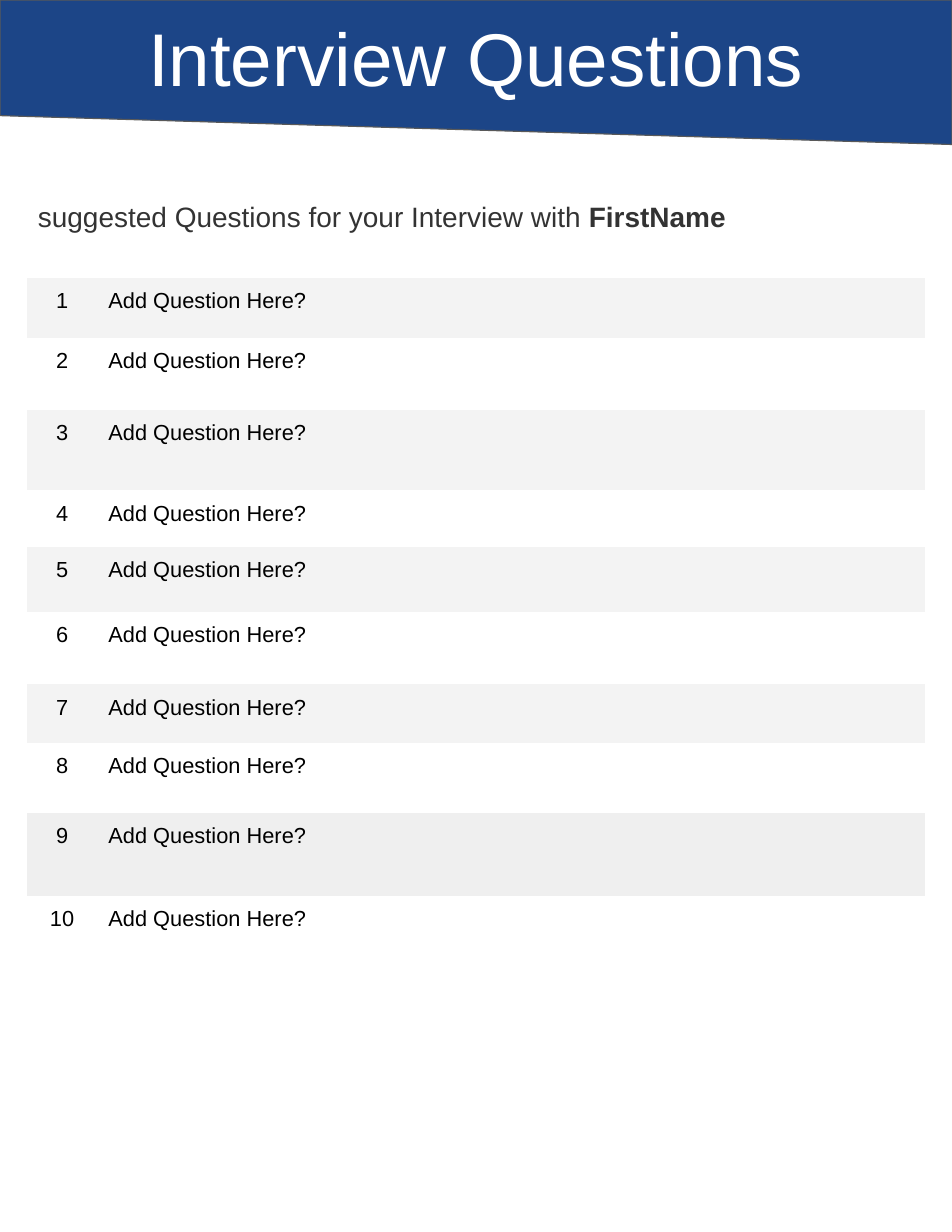
from pptx import Presentation
from pptx.dml.color import RGBColor
from pptx.enum.shapes import MSO_SHAPE
from pptx.enum.text import MSO_ANCHOR, MSO_AUTO_SIZE, PP_ALIGN
from pptx.oxml.ns import qn
from pptx.util import Pt

# Content
TITLE = "Interview Questions"
INTRO = [("suggested Questions for your Interview with ", False), ("FirstName", True)]
QUESTIONS = ["Add Question Here?"] * 10

# Layout, in points
PAGE_WIDTH, PAGE_HEIGHT = 612, 792
BANNER_HEIGHT = 92.9
MARGIN = 17.3
TABLE_TOP = 178.6
COLUMN_WIDTHS = [45.2, 532.1]
ROW_HEIGHTS = [38.4, 46.5, 51.6, 36.4, 41.8, 46.5, 37.6, 45.2, 53.3, 60.5]
PADDING = 7.2

# Colours
BLUE = RGBColor(0x1C, 0x45, 0x87)
OUTLINE = RGBColor(0x59, 0x59, 0x59)
WHITE = RGBColor(0xFF, 0xFF, 0xFF)
BLACK = RGBColor(0, 0, 0)
CHARCOAL = RGBColor(0x33, 0x33, 0x33)
STRIPE = RGBColor(0xF3, 0xF3, 0xF3)
DARK_STRIPE = RGBColor(0xEF, 0xEF, 0xEF)
DARK_STRIPE_NUMBER = 9

NO_STYLE_NO_GRID = "{2D5ABB26-0587-4C30-8999-92F81FD0307C}"
FRAME_FORMAT = {
    "word_wrap": True,
    "auto_size": MSO_AUTO_SIZE.NONE,
    **{f"margin_{side}": Pt(PADDING) for side in ("left", "top", "right", "bottom")},
}
CELL_FORMAT = {
    "vertical_anchor": MSO_ANCHOR.TOP,
    **{f"margin_{side}": Pt(PADDING) for side in ("left", "top", "right", "bottom")},
}


def apply_format(target, values):
    for name, value in values.items():
        setattr(target, name, value)


def add_text(paragraph, text, size, color, bold=False):
    run = paragraph.add_run()
    run.text = text
    apply_format(run.font, {"name": "Arial", "size": Pt(size), "bold": bold})
    run.font.color.rgb = color


def place(shape, left, top, width, height):
    apply_format(shape, {"left": Pt(left), "top": Pt(top),
                         "width": Pt(width), "height": Pt(height)})


presentation = Presentation()
apply_format(presentation, {"slide_width": Pt(PAGE_WIDTH), "slide_height": Pt(PAGE_HEIGHT)})
slide = presentation.slides.add_slide(presentation.slide_layouts[5])

# Banner: turned and mirrored so the slant is at the bottom, kept behind the title
banner = slide.shapes.add_shape(MSO_SHAPE.FLOWCHART_MANUAL_INPUT,
                                0, 0, Pt(PAGE_WIDTH), Pt(BANNER_HEIGHT))
banner.rotation = 180
banner._element.spPr.find(qn("a:xfrm")).set("flipH", "1")
banner.shadow.inherit = False
banner.fill.solid()
banner.fill.fore_color.rgb = BLUE
banner.line.color.rgb = OUTLINE
banner.line.width = Pt(0.75)
slide.shapes._spTree.insert(2, banner._element)

# Title
title = slide.shapes.title
place(title, 2.9, 0, 606.2, 72.7)
apply_format(title.text_frame, {**FRAME_FORMAT, "vertical_anchor": MSO_ANCHOR.BOTTOM})
heading = title.text_frame.paragraphs[0]
heading.alignment = PP_ALIGN.CENTER
add_text(heading, TITLE, 48, WHITE)

# Introduction
intro = slide.shapes.add_textbox(Pt(MARGIN), Pt(118.1), Pt(sum(COLUMN_WIDTHS)), Pt(40.3))
apply_format(intro.text_frame, {**FRAME_FORMAT, "vertical_anchor": MSO_ANCHOR.TOP})
sentence = intro.text_frame.paragraphs[0]
sentence.line_spacing = 1.15
for text, bold in INTRO:
    add_text(sentence, text, 18, CHARCOAL, bold)

# Numbered questions on alternating stripes
table_frame = slide.shapes.add_table(len(QUESTIONS), len(COLUMN_WIDTHS), Pt(MARGIN), Pt(TABLE_TOP),
                                     Pt(sum(COLUMN_WIDTHS)), Pt(sum(ROW_HEIGHTS)))
question_table = table_frame.table
apply_format(question_table, {"first_row": False, "horz_banding": False})
question_table._tbl.tblPr.find(qn("a:tableStyleId")).text = NO_STYLE_NO_GRID
for column, width in zip(question_table.columns, COLUMN_WIDTHS):
    column.width = Pt(width)

for number, (question, row, height) in enumerate(
        zip(QUESTIONS, question_table.rows, ROW_HEIGHTS), start=1):
    row.height = Pt(height)
    entries = [(str(number), PP_ALIGN.CENTER), (question, PP_ALIGN.LEFT)]
    for cell, (text, alignment) in zip(row.cells, entries):
        apply_format(cell, CELL_FORMAT)
        if number % 2:
            cell.fill.solid()
            cell.fill.fore_color.rgb = DARK_STRIPE if number == DARK_STRIPE_NUMBER else STRIPE
        else:
            cell.fill.background()
        paragraph = cell.text_frame.paragraphs[0]
        paragraph.alignment = alignment
        add_text(paragraph, text, 14, BLACK)

presentation.save("out.pptx")
